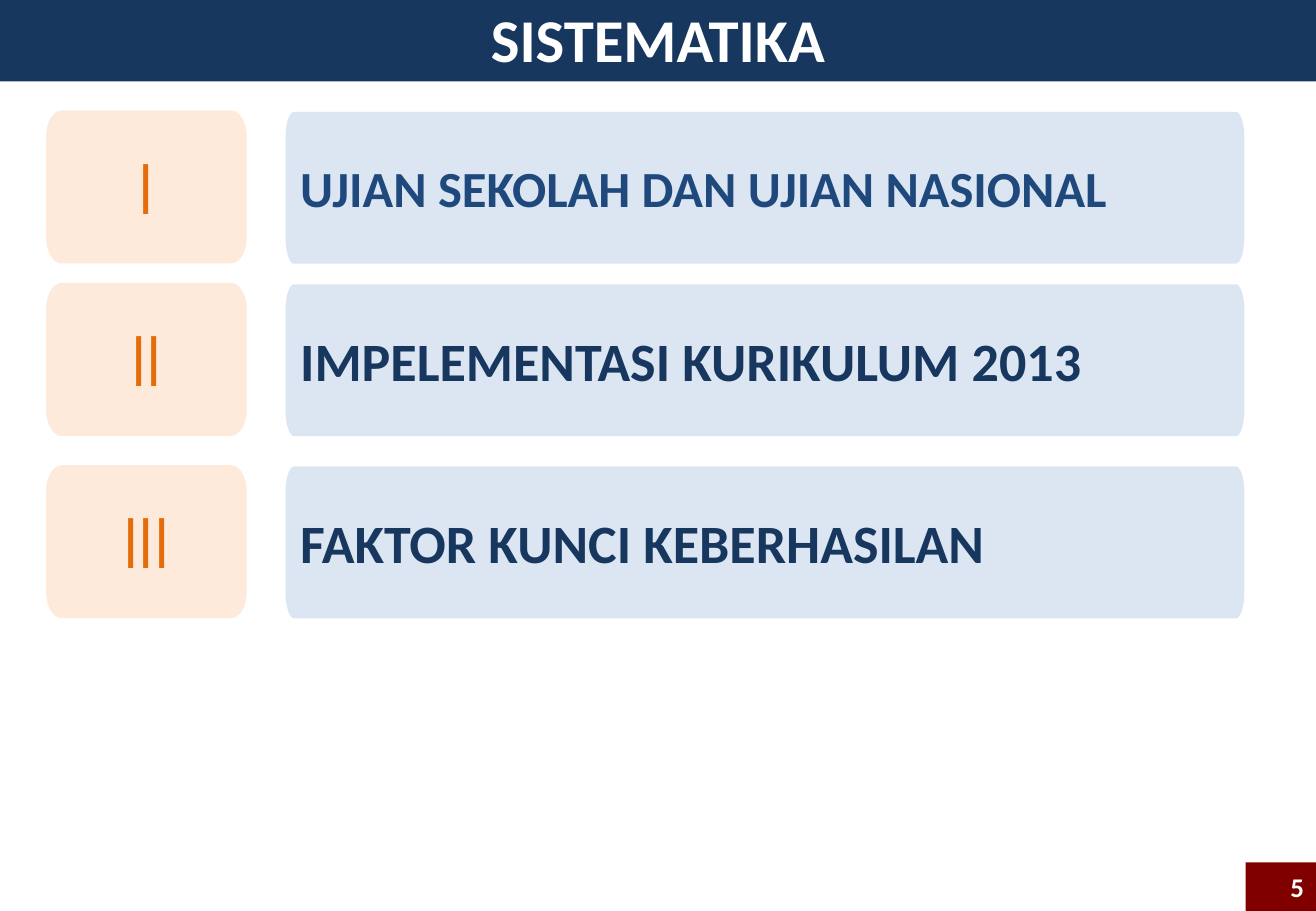
from lxml import etree
from pptx import Presentation
from pptx.dml.color import RGBColor
from pptx.enum import shapes, text
from pptx.oxml.ns import qn
from pptx.util import Inches, Pt

COLORS = {
    "navy": "17375E", "blue": "1F497D", "pale_blue": "DCE6F2",
    "peach": "FDEADA", "orange": "E46C0A", "maroon": "800000", "white": "FFFFFF",
}
ROWS = [
    (0.91, "I", "UJIAN SEKOLAH DAN UJIAN NASIONAL", 30, "blue"),
    (2.33, "II", "IMPELEMENTASI KURIKULUM 2013", 32, "navy"),
    (3.83, "III", "FAKTOR KUNCI KEBERHASILAN", 32, "navy"),
]


def rgb(name):
    """Return the named colour."""
    return RGBColor.from_string(COLORS[name])


def paint(sp, fill):
    """Give a shape a flat fill without line or shadow."""
    sp.fill.solid()
    sp.fill.fore_color.rgb = rgb(fill)
    sp.line.fill.background()
    sp.shadow.inherit = False


def write(sp, words, size, color, align, font="Calibri", bold=True):
    """Set one vertically centred line of text in a shape."""
    tf = sp.text_frame
    tf.text = words
    tf.word_wrap = True
    tf.auto_size = text.MSO_AUTO_SIZE.NONE
    tf.vertical_anchor = text.MSO_ANCHOR.MIDDLE
    p = tf.paragraphs[0]
    p.alignment = align
    f = p.runs[0].font
    f.name, f.size, f.bold = font, Pt(size), bold
    f.color.rgb = rgb(color)


def round_corners(sp):
    """Turn the four bevels of an octagon into curves."""
    w, h = sp.width, sp.height
    points = list(sp._element.iter(qn("a:pt")))
    corners = [(0, 0), (0, h), (w, h), (w, 0)]
    for i, corner in enumerate(corners):
        start, end = points[2 * i], points[2 * i + 1]
        bevel = end.getparent()
        curve = etree.Element(qn("a:cubicBezTo"))
        for pt in (start, end):
            x, y = (int(int(pt.get(k)) + 0.55 * (c - int(pt.get(k))))
                    for k, c in zip("xy", corner))
            etree.SubElement(curve, qn("a:pt"), x=str(x), y=str(y))
        curve.append(end)
        bevel.getparent().replace(bevel, curve)


def add_panel(s, x, y, w, h, rx, ry, fill):
    """Add a rectangle with elliptical corners."""
    right, bottom = x + w, y + h
    outline = [(x + rx, y), (x, y + ry), (x, bottom - ry), (x + rx, bottom),
               (right - rx, bottom), (right, bottom - ry),
               (right, y + ry), (right - rx, y)]
    points = [(Inches(px), Inches(py)) for px, py in outline]
    builder = s.shapes.build_freeform(*points[0])
    builder.add_line_segments(points[1:], close=True)
    sp = builder.convert_to_shape()
    round_corners(sp)
    paint(sp, fill)
    return sp


def add_title(s, x, y, w, h):
    """Format the title as a banner."""
    sp = s.shapes.title
    sp.left, sp.top, sp.width, sp.height = map(Inches, (x, y, w, h))
    sp.fill.solid()
    sp.fill.fore_color.rgb = rgb("navy")
    write(sp, "SISTEMATIKA", 36, "white", text.PP_ALIGN.CENTER)


def add_row(s, x, y, w, h, numeral, topic, size, color):
    """Add a numeral badge and its topic bar."""
    badge_w, bar_x, drop = 1.65, 1.97, 0.01
    bar = add_panel(s, x + bar_x, y + drop, w - bar_x, h - drop, 0.07, 0.21, "pale_blue")
    write(bar, topic, size, color, text.PP_ALIGN.LEFT)
    bar.text_frame.margin_left = Inches(0.12)
    badge = add_panel(s, x, y, badge_w, h, 0.13, 0.21, "peach")
    write(badge, numeral, 40, "orange", text.PP_ALIGN.CENTER, "TeX Gyre Adventor", False)


def add_page_number(s, x, y, w, h):
    """Add the page number box."""
    sp = s.shapes.add_shape(shapes.MSO_SHAPE.RECTANGLE, *map(Inches, (x, y, w, h)))
    paint(sp, "maroon")
    write(sp, "5", 16, "white", text.PP_ALIGN.RIGHT)


def main():
    """Build and save the slide."""
    prs = Presentation()
    prs.slide_width, prs.slide_height = Inches(10.83), Inches(7.5)
    s = prs.slides.add_slide(prs.slide_layouts[5])
    add_title(s, 0, -0.04, 10.83, 0.71)
    add_page_number(s, 10.25, 7.1, 0.58, 0.4)
    for y, numeral, topic, size, color in ROWS:
        add_row(s, 0.38, y, 9.86, 1.26, numeral, topic, size, color)
    prs.save("out.pptx")


if __name__ == "__main__":
    main()
